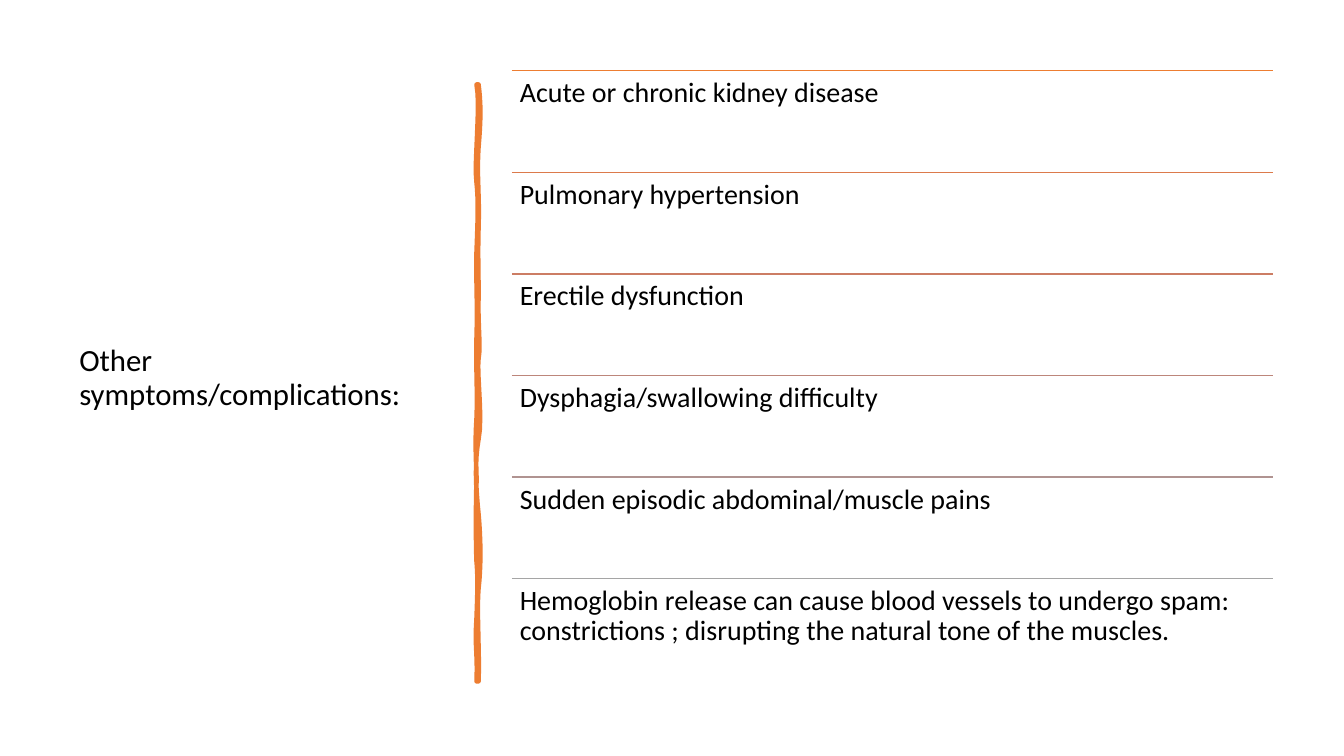
"""Build the slide of other symptoms and complications."""
from dataclasses import dataclass

from lxml import etree
from pptx import Presentation
from pptx import util as u
from pptx.dml.color import RGBColor
from pptx.enum import shapes, text
from pptx.oxml.ns import qn


@dataclass(frozen=True)
class Theme:
    """Colours and type sizes of the slide."""
    font: str = "Calibri"
    ink: str = "000000"
    accent: str = "ED7D31"
    rules: tuple = ("ED7D31", "DC7A4B", "CC7D64", "BD867B", "B09391", "A5A5A5")
    heading_size: int = 22
    symptom_size: int = 20
    brush_width: float = 3.25
    rule_width: float = 1


class Sketch:
    """Draw styled elements on one slide."""

    def __init__(self, slide, theme):
        """Keep the slide and its theme."""
        self.slide = slide
        self.theme = theme

    def words(self, content, box, size, anchor, inset):
        """Add a wrapped text box."""
        left, top, width, height = map(u.Cm, box)
        frame = self.slide.shapes.add_textbox(left, top, width, height).text_frame
        across, down = map(u.Cm, inset)
        layout = {"word_wrap": True, "vertical_anchor": anchor,
                  "margin_left": across, "margin_right": across,
                  "margin_top": down, "margin_bottom": down}
        for name, value in layout.items():
            setattr(frame, name, value)
        paragraph = frame.paragraphs[0]
        paragraph.line_spacing = 0.9
        run = paragraph.add_run()
        run.text = content
        for name, value in {"name": self.theme.font, "size": u.Pt(size)}.items():
            setattr(run.font, name, value)
        run.font.color.rgb = RGBColor.from_string(self.theme.ink)

    def rule(self, left, top, width, colour):
        """Add a thin horizontal line."""
        start, end, y = u.Cm(left), u.Cm(left + width), u.Cm(top)
        line = self.slide.shapes.add_connector(
            shapes.MSO_CONNECTOR.STRAIGHT, start, y, end, y)
        line.line.color.rgb = RGBColor.from_string(colour)
        line.line.width = u.Pt(self.theme.rule_width)
        etree.SubElement(line._element.spPr, qn("a:effectLst"))

    def brush(self, outline):
        """Add a filled hand-drawn stroke."""
        points = [(u.Cm(x), u.Cm(y)) for x, y in outline]
        builder = self.slide.shapes.build_freeform(*points[0])
        builder.add_line_segments(points[1:], close=True)
        stroke = builder.convert_to_shape()
        stroke.shadow.inherit = False
        colour = RGBColor.from_string(self.theme.accent)
        stroke.fill.solid()
        stroke.fill.fore_color.rgb = colour
        stroke.line.color.rgb = colour
        stroke.line.width = u.Pt(self.theme.brush_width)


def wavy_edge(x, start, bends, steps=8):
    """Sample the curves that swing around a vertical edge."""
    points = [(x, start)]
    for x1, y1, x2, y2, end in bends:
        for step in range(1, steps + 1):
            t = step / steps
            s = 1 - t
            weights = (s ** 3, 3 * s * s * t, 3 * s * t * t, t ** 3)
            points.append((sum(w * p for w, p in zip(weights, (x, x1, x2, x))),
                           sum(w * p for w, p in zip(weights, (start, y1, y2, end)))))
        start = end
    return points


BRUSH_TOP, BRUSH_BOTTOM = 2.13, 17.17
RIGHT_BENDS = [
    (12.12, 2.59, 12.12, 3.02, 3.71), (12.01, 4.39, 12.09, 4.95, 5.74),
    (12.04, 6.53, 12.06, 6.65, 7.47), (12.04, 8.26, 12.12, 8.69, 9.04),
    (12.01, 9.4, 12.17, 10.52, 11.07), (11.96, 11.61, 11.99, 12.29, 12.95),
    (12.12, 13.61, 12.12, 14.33, 14.83), (12.01, 15.32, 12.09, 16.51, BRUSH_BOTTOM),
]
LEFT_BENDS = [
    (12.04, 16.41, 11.96, 16.36, 15.57), (12.04, 14.81, 12.04, 14.48, 14.15),
    (11.99, 13.82, 11.99, 12.57, 12.12), (12.01, 11.66, 11.96, 11.3, 10.54),
    (12.04, 9.8, 11.99, 9.47, 8.51), (12.04, 7.57, 11.99, 7.14, 6.35),
    (12.04, 5.54, 12.06, 5.08, 4.6), (11.94, 4.14, 12.12, 2.64, BRUSH_TOP),
]
SYMPTOMS = [
    "Acute or chronic kidney disease",
    "Pulmonary hypertension",
    "Erectile dysfunction",
    "Dysphagia/swallowing difficulty",
    "Sudden episodic abdominal/muscle pains",
    "Hemoglobin release can cause blood vessels to undergo spam: "
    "constrictions ; disrupting the natural tone of the muscles.",
]
LIST_LEFT, LIST_TOP, LIST_WIDTH, ROW_HEIGHT = 12.9, 1.78, 19.18, 2.56


def main():
    """Lay out the heading, the stroke and the ruled list."""
    deck = Presentation()
    deck.slide_width, deck.slide_height = u.Cm(33.87), u.Cm(19.05)
    theme = Theme()
    sketch = Sketch(deck.slides.add_slide(deck.slide_layouts[6]), theme)
    sketch.words("Other symptoms/complications:", (1.75, 1.78, 9.5, 15.52),
                 theme.heading_size, text.MSO_ANCHOR.MIDDLE, (0.25, 0.13))
    sketch.brush(wavy_edge(12.06, BRUSH_TOP, RIGHT_BENDS)
                 + wavy_edge(12.01, BRUSH_BOTTOM, LEFT_BENDS))
    for row, (symptom, colour) in enumerate(zip(SYMPTOMS, theme.rules)):
        top = LIST_TOP + row * ROW_HEIGHT
        sketch.rule(LIST_LEFT, top, LIST_WIDTH, colour)
        sketch.words(symptom, (LIST_LEFT, top, LIST_WIDTH, ROW_HEIGHT),
                     theme.symptom_size, text.MSO_ANCHOR.TOP, (0.2, 0.2))
    deck.save("out.pptx")


if __name__ == "__main__":
    main()
